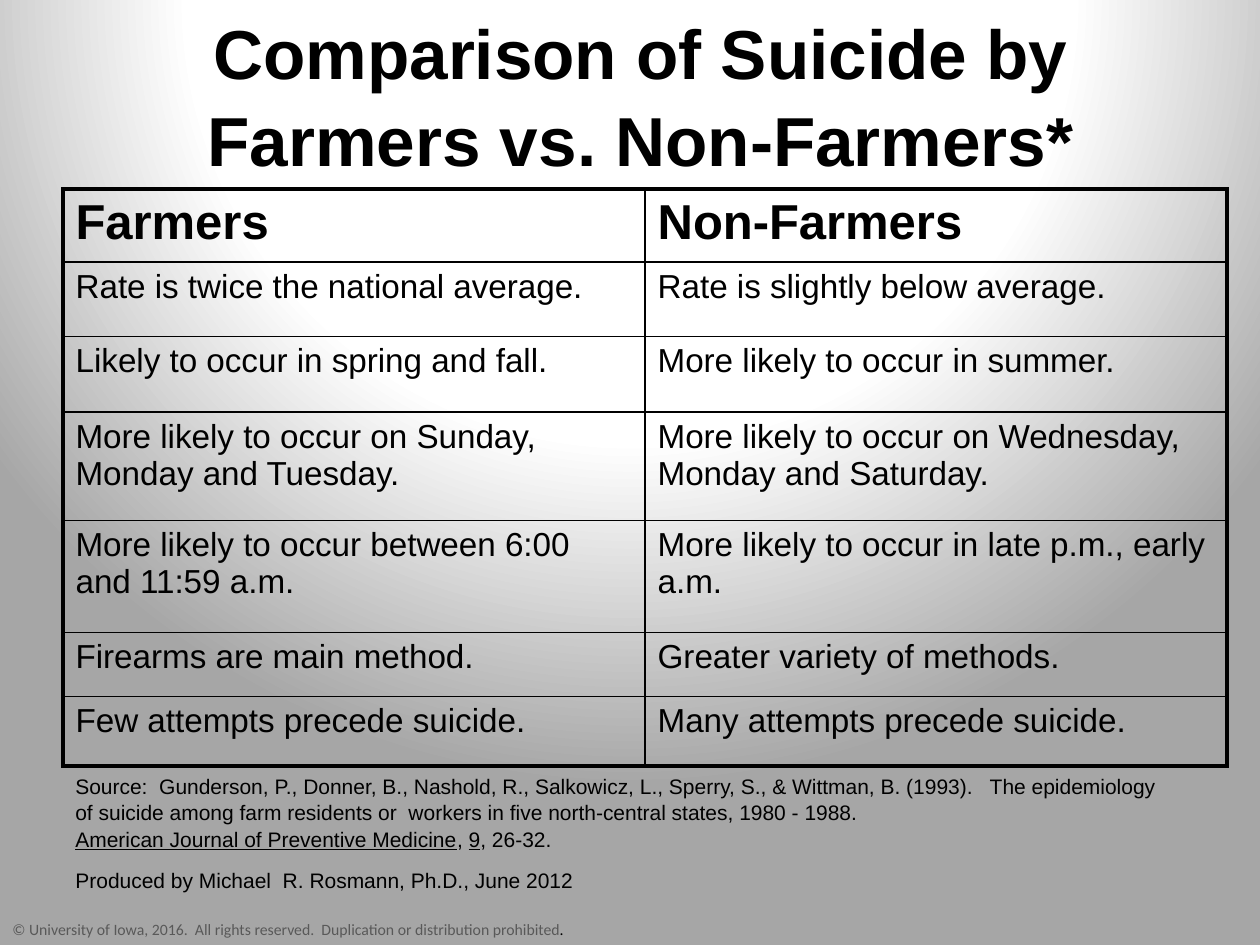
import dataclasses

import pptx
import pptx.dml.color
import pptx.enum.text
import pptx.oxml
import pptx.oxml.ns
import pptx.util

Inches = pptx.util.Inches
Pt = pptx.util.Pt


@dataclasses.dataclass(frozen=True)
class Theme:
    ink: str = "000000"
    muted: str = "595959"
    paper: str = "FFFFFF"
    shade: str = "A6A6A6"
    font: str = "Arial"
    footer_font: str = "Calibri"
    title_size: float = 39.6
    header_size: float = 28
    body_size: float = 19
    note_size: float = 12
    footer_size: float = 9
    thin: float = 1
    thick: float = 2.25
    leading: float = 1.05


THEME = Theme()

COMPARISON = [
    ("Farmers", "Non-Farmers"),
    ("Rate is twice the national average.", "Rate is slightly below average."),
    ("Likely to occur in spring and fall.", "More likely to occur in summer."),
    ("More likely to occur on Sunday, Monday and Tuesday.",
     "More likely to occur on Wednesday, Monday and Saturday."),
    ("More likely to occur between 6:00 and 11:59 a.m.",
     "More likely to occur in late p.m., early a.m."),
    ("Firearms are main method.", "Greater variety of methods."),
    ("Few attempts precede suicide.", "Many attempts precede suicide."),
]
ROW_HEIGHTS = [0.58, 0.59, 0.6, 0.86, 0.89, 0.51, 0.55]
COLUMN_WIDTH = 4.62

SOURCE_LINES = [
    [("Source:  Gunderson, P., Donner, B., Nashold, R., Salkowicz, L., Sperry, S., "
      "& Wittman, B. (1993).   The epidemiology", {})],
    [("of suicide among farm residents or  workers in five north-central states, "
      "1980 - 1988.", {})],
    [("American Journal of Preventive Medicine", {"underline": True}), (", ", {}),
     ("9", {"underline": True}), (", 26-32.", {})],
]
PRODUCER_LINES = [[("Produced by Michael  R. Rosmann, Ph.D., June 2012", {})]]
FOOTER_LINES = [
    [("© University of Iowa, 2016.  All rights reserved.  "
      "Duplication or distribution prohibited", {"color": THEME.muted}),
     (".", {})],
]


def set_attributes(target, values):
    for name, value in values.items():
        setattr(target, name, value)


def style_font(font, size, color=THEME.ink, **values):
    set_attributes(font, {"name": THEME.font, "size": Pt(size), **values})
    font.color.rgb = pptx.dml.color.RGBColor.from_string(color)


def paint_background(slide):
    """Fill the slide with a radial gradient centred above its top edge."""
    slide.background.fill.solid()
    properties = slide.element.find(".//" + pptx.oxml.ns.qn("p:bgPr"))
    stops = "".join(
        f'<a:gs pos="{position * 1000}"><a:srgbClr val="{color}"/></a:gs>'
        for position, color in [(0, THEME.paper), (56, THEME.paper), (100, THEME.shade)])
    gradient = pptx.oxml.parse_xml(
        f'<a:gradFill {pptx.oxml.ns.nsdecls("a")} rotWithShape="1">'
        f'<a:gsLst>{stops}</a:gsLst><a:path path="circle">'
        '<a:fillToRect l="50000" t="-80000" r="50000" b="180000"/>'
        '</a:path></a:gradFill>')
    properties.replace(properties[0], gradient)


def set_title(slide, text):
    title = slide.shapes.title
    set_attributes(title, {"left": Inches(0.5), "top": Inches(0),
                           "width": Inches(9.17), "height": Inches(1.57)})
    frame = title.text_frame
    set_attributes(frame, {"text": text, "word_wrap": True,
                           "auto_size": pptx.enum.text.MSO_AUTO_SIZE.NONE,
                           "vertical_anchor": pptx.enum.text.MSO_ANCHOR.TOP})
    heading = frame.paragraphs[0]
    set_attributes(heading, {"alignment": pptx.enum.text.PP_ALIGN.CENTER,
                             "line_spacing": THEME.leading})
    style_font(heading.runs[0].font, THEME.title_size, bold=True)


def set_borders(cell, widths):
    """Draw the cell's left, right, top and bottom borders, in that order."""
    properties = cell._tc.get_or_add_tcPr()
    for index, (side, width) in enumerate(zip("LRTB", widths)):
        properties.insert(index, pptx.oxml.parse_xml(
            f'<a:ln{side} {pptx.oxml.ns.nsdecls("a")} w="{Pt(width)}"><a:solidFill>'
            f'<a:srgbClr val="{THEME.ink}"/></a:solidFill></a:ln{side}>'))


def add_comparison(slide):
    last_row, last_column = len(COMPARISON) - 1, len(COMPARISON[0]) - 1
    table = slide.shapes.add_table(
        last_row + 1, last_column + 1, Inches(0.5), Inches(1.5),
        Inches(COLUMN_WIDTH * 2), Inches(sum(ROW_HEIGHTS))).table
    set_attributes(table, {"first_row": False, "horz_banding": False})
    for column in table.columns:
        column.width = Inches(COLUMN_WIDTH)
    for row, texts in enumerate(COMPARISON):
        table.rows[row].height = Inches(ROW_HEIGHTS[row])
        is_header = row == 0
        for column, text in enumerate(texts):
            cell = table.cell(row, column)
            cell.text = text
            cell.fill.background()
            style_font(cell.text_frame.paragraphs[0].runs[0].font,
                       THEME.header_size if is_header else THEME.body_size,
                       bold=is_header)
            outer = (column == 0, column == last_column, is_header, row == last_row)
            set_borders(cell, [THEME.thick if edge else THEME.thin for edge in outer])


def add_note(slide, box, lines, size=THEME.note_size, leading=THEME.leading, **font):
    frame = slide.shapes.add_textbox(*map(Inches, box)).text_frame
    frame.word_wrap = False
    paragraph = frame.paragraphs[0]
    set_attributes(paragraph, {"alignment": pptx.enum.text.PP_ALIGN.LEFT,
                               "line_spacing": leading})
    for index, line in enumerate(lines):
        if index:
            paragraph.add_line_break()
        for text, emphasis in line:
            run = paragraph.add_run()
            run.text = text
            style_font(run.font, size, **{**font, **emphasis})


def main():
    deck = pptx.Presentation()
    set_attributes(deck, {"slide_width": Inches(10), "slide_height": Inches(7.5)})
    slide = deck.slides.add_slide(deck.slide_layouts.get_by_name("Title Only"))
    paint_background(slide)
    set_title(slide, "Comparison of Suicide by Farmers vs. Non-Farmers*")
    add_comparison(slide)
    add_note(slide, (0.5, 6.08, 8.87, 0.71), SOURCE_LINES)
    add_note(slide, (0.5, 6.83, 4.19, 0.3), PRODUCER_LINES)
    add_note(slide, (0, 7.25, 6.08, 0.25), FOOTER_LINES,
             size=THEME.footer_size, leading=1.0, name=THEME.footer_font)
    deck.save("out.pptx")


if __name__ == "__main__":
    main()
